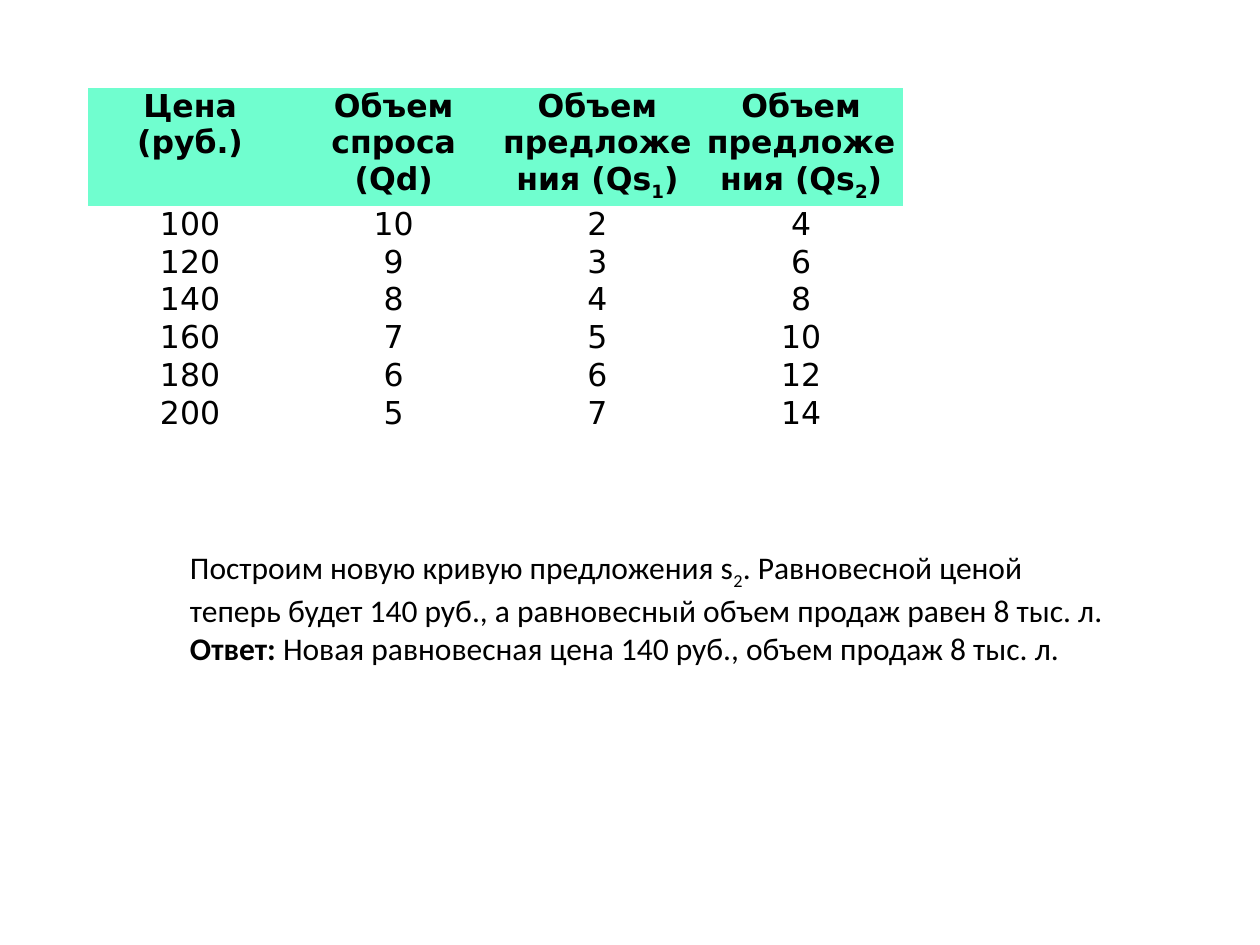
from pptx import Presentation
from pptx.dml.color import RGBColor
from pptx.enum.text import MSO_AUTO_SIZE, PP_ALIGN
from pptx.util import Pt

CENTER = PP_ALIGN.CENTER
GROW = MSO_AUTO_SIZE.SHAPE_TO_FIT_TEXT
NO_STYLE = "{2D5ABB26-0587-4C30-8999-92F81FD0307C}"
SUB, BOLD = "sub", "bold"

HEADER = [
    [("Цена (руб.)", "")],
    [("Объем спроса (Qd)", "")],
    [("Объем предложения (Qs", ""), ("1", SUB), (")", "")],
    [("Объем предложения (Qs", ""), ("2", SUB), (")", "")],
]
ROWS = [
    (100, 10, 2, 4),
    (120, 9, 3, 6),
    (140, 8, 4, 8),
    (160, 7, 5, 10),
    (180, 6, 6, 12),
    (200, 5, 7, 14),
]
CONCLUSION = [
    [("Построим новую кривую предложения s", ""), ("2", SUB),
     (". Равновесной ценой теперь будет 140 руб., а равновесный объем продаж равен 8 тыс. л.", "")],
    [("Ответ:\u00a0", BOLD), ("Новая равновесная цена 140 руб., объем продаж 8 тыс. л.", "")],
]
LEFT, TOP, COL_W, HEAD_H, ROW_H = 50.4, 50.4, 116.4, 67.4, 21.6


def color(value):
    return RGBColor.from_string(value)


def add_runs(p, parts, font, bold=False):
    for text, style in parts:
        r = p.add_run()
        r.text = text
        r.font.name = font
        r.font.size = Pt(18)
        r.font.bold = bold or style == BOLD
        r.font.color.rgb = color("000000")
        if style == SUB:
            r._r.get_or_add_rPr().set("baseline", "-25000")


def add_price_table(s):
    grid = [HEADER] + [[[(str(v), "")] for v in row] for row in ROWS]
    heights = [HEAD_H] + [ROW_H] * len(ROWS)
    frame = s.shapes.add_table(len(grid), len(HEADER), Pt(LEFT), Pt(TOP),
                               Pt(COL_W * len(HEADER)), Pt(sum(heights)))
    table = frame.table
    table.horz_banding = False
    table._tbl.tblPr[0].text = NO_STYLE
    for col in table.columns:
        col.width = Pt(COL_W)
    for i, (row, height) in enumerate(zip(grid, heights)):
        table.rows[i].height = Pt(height)
        for j, parts in enumerate(row):
            cell = table.cell(i, j)
            cell.margin_left = cell.margin_right = 0
            cell.margin_top = cell.margin_bottom = 0
            if i == 0:
                cell.fill.solid()
                cell.fill.fore_color.rgb = color("70FECF")
            else:
                cell.fill.background()
            p = cell.text_frame.paragraphs[0]
            p.alignment = CENTER
            add_runs(p, parts, "DejaVu Sans", bold=i == 0)


def add_conclusion(s):
    tf = s.shapes.add_textbox(Pt(101.5), Pt(309.6), Pt(540), Pt(72.7)).text_frame
    tf.word_wrap = True
    tf.auto_size = GROW
    for i, parts in enumerate(CONCLUSION):
        p = tf.add_paragraph() if i else tf.paragraphs[0]
        add_runs(p, parts, "Calibri")


def main():
    prs = Presentation()
    prs.slide_width, prs.slide_height = Pt(720), Pt(540)
    s = prs.slides.add_slide(prs.slide_layouts[6])
    add_price_table(s)
    add_conclusion(s)
    prs.save("out.pptx")


if __name__ == "__main__":
    main()
